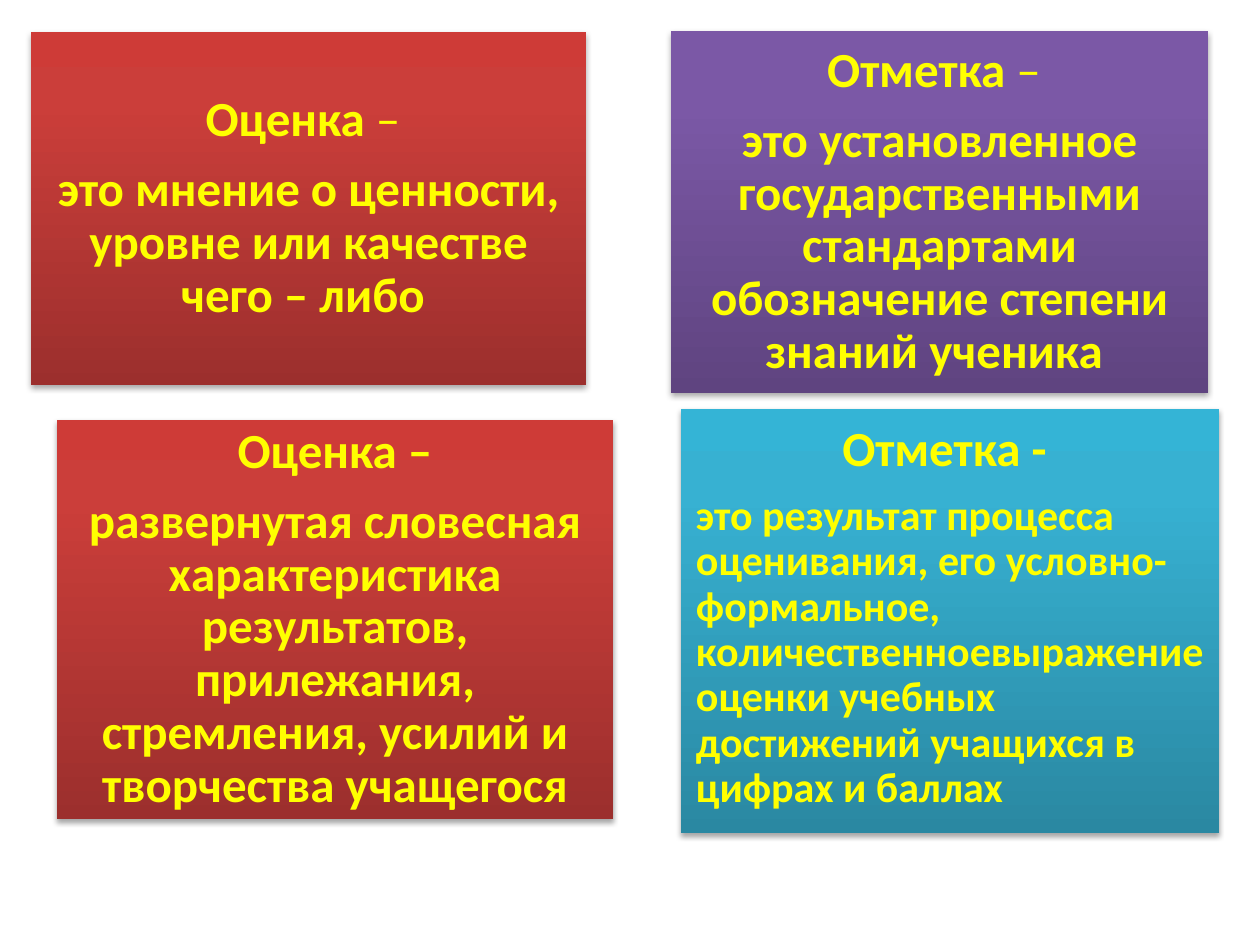
"""Build a slide of four cards that contrast assessment with marks."""
from dataclasses import dataclass

from lxml import etree
from pptx import Presentation
from pptx.dml.color import RGBColor
from pptx.enum.shapes import MSO_SHAPE
from pptx.enum.text import MSO_ANCHOR, PP_ALIGN
from pptx.oxml import parse_xml
from pptx.slide import Slide
from pptx.util import Emu, Pt

RECTANGLE = MSO_SHAPE.RECTANGLE
MIDDLE, TOP = MSO_ANCHOR.MIDDLE, MSO_ANCHOR.TOP
CENTER, LEFT = PP_ALIGN.CENTER, PP_ALIGN.LEFT

EMU_PER_PX = 914400 / 126
SLIDE_WIDTH, SLIDE_HEIGHT = 1260, 945
INSET = 15
NAMESPACE = "http://schemas.openxmlformats.org/drawingml/2006/main"
STOP_POSITIONS = (0, 80, 100)
COLORS = {
    "text": "FFFF00",
    "shadow": "000000",
    "red": ("9C2F2D", "CB3E3A", "CE3B37"),
    "purple": ("5F4480", "7B58A6", "7C57A8"),
    "teal": ("2A88A2", "37B1D2", "34B4D6"),
}


@dataclass(frozen=True)
class Card:
    """A gradient card with a heading, a dash and a definition."""

    left: int
    top: int
    width: int
    height: int
    gradient: str
    term: str
    dash: str
    definition: str
    dash_bold: bool = False
    anchor: MSO_ANCHOR = MIDDLE
    alignment: PP_ALIGN = CENTER
    definition_size: int = 28


CARDS = (
    Card(31, 32, 555, 353, "red", "Оценка ", "– ",
         "это мнение о ценности, уровне или качестве чего – либо "),
    Card(57, 420, 556, 399, "red", "Оценка ", "–",
         "развернутая словесная характеристика результатов, прилежания, "
         "стремления, усилий и творчества учащегося", dash_bold=True),
    Card(671, 31, 537, 362, "purple", "Отметка ", "– ",
         "это установленное государственными стандартами обозначение "
         "степени знаний ученика "),
    Card(681, 409, 538, 424, "teal", "Отметка ", "- ",
         "это результат процесса оценивания, его условно-формальное, "
         "количественноевыражение оценки учебных достижений учащихся "
         "в цифрах и баллах", dash_bold=True, anchor=TOP, alignment=LEFT,
         definition_size=24),
)


def px(length: int) -> Emu:
    """Turn pixels into EMU."""
    return Emu(round(length * EMU_PER_PX))


def gradient_fill(name: str) -> etree._Element:
    """Return a three-stop gradient that runs from bottom to top."""
    stops = "".join(
        f'<a:gs pos="{position * 1000}"><a:srgbClr val="{color}"/></a:gs>'
        for position, color in zip(STOP_POSITIONS, COLORS[name])
    )
    return parse_xml(
        f'<a:gradFill xmlns:a="{NAMESPACE}" rotWithShape="1">'
        f'<a:gsLst>{stops}</a:gsLst>'
        '<a:lin ang="16200000" scaled="0"/></a:gradFill>'
    )


def soft_shadow() -> etree._Element:
    """Return a soft shadow cast downwards."""
    return parse_xml(
        f'<a:outerShdw xmlns:a="{NAMESPACE}" blurRad="40000" dist="23000" '
        'dir="5400000" rotWithShape="0">'
        f'<a:srgbClr val="{COLORS["shadow"]}"><a:alpha val="35000"/></a:srgbClr>'
        '</a:outerShdw>'
    )


def write_paragraph(paragraph, alignment: PP_ALIGN,
                    runs: tuple[tuple[str, int, bool], ...]) -> None:
    """Fill a paragraph with runs of text, size and weight."""
    layout = {"alignment": alignment, "line_spacing": 0.9, "space_after": Pt(9.8)}
    for name, value in layout.items():
        setattr(paragraph, name, value)
    for text, size, bold in runs:
        run = paragraph.add_run()
        run.text = text
        style = {"name": "Calibri", "size": Pt(size), "bold": bold}
        for name, value in style.items():
            setattr(run.font, name, value)
        run.font.color.rgb = RGBColor.from_string(COLORS["text"])


def draw_card(slide: Slide, card: Card) -> None:
    """Draw one card with its shadow and text."""
    shape = slide.shapes.add_shape(
        RECTANGLE, px(card.left), px(card.top), px(card.width), px(card.height))
    shape.line.fill.background()
    shape.shadow.inherit = False
    properties = shape._element.spPr
    properties.find(f"{{{NAMESPACE}}}prstGeom").addnext(gradient_fill(card.gradient))
    properties.find(f"{{{NAMESPACE}}}effectLst").append(soft_shadow())

    frame = shape.text_frame
    layout = {"word_wrap": True, "vertical_anchor": card.anchor}
    layout |= {f"margin_{side}": px(INSET)
               for side in ("left", "top", "right", "bottom")}
    for name, value in layout.items():
        setattr(frame, name, value)
    write_paragraph(frame.paragraphs[0], CENTER,
                    ((card.term, 28, True), (card.dash, 28, card.dash_bold)))
    write_paragraph(frame.add_paragraph(), card.alignment,
                    ((card.definition, card.definition_size, True),))


def main() -> None:
    """Create and save the presentation."""
    presentation = Presentation()
    presentation.slide_width = px(SLIDE_WIDTH)
    presentation.slide_height = px(SLIDE_HEIGHT)
    slide = presentation.slides.add_slide(presentation.slide_layouts[6])
    for card in CARDS:
        draw_card(slide, card)
    presentation.save("out.pptx")


if __name__ == "__main__":
    main()
